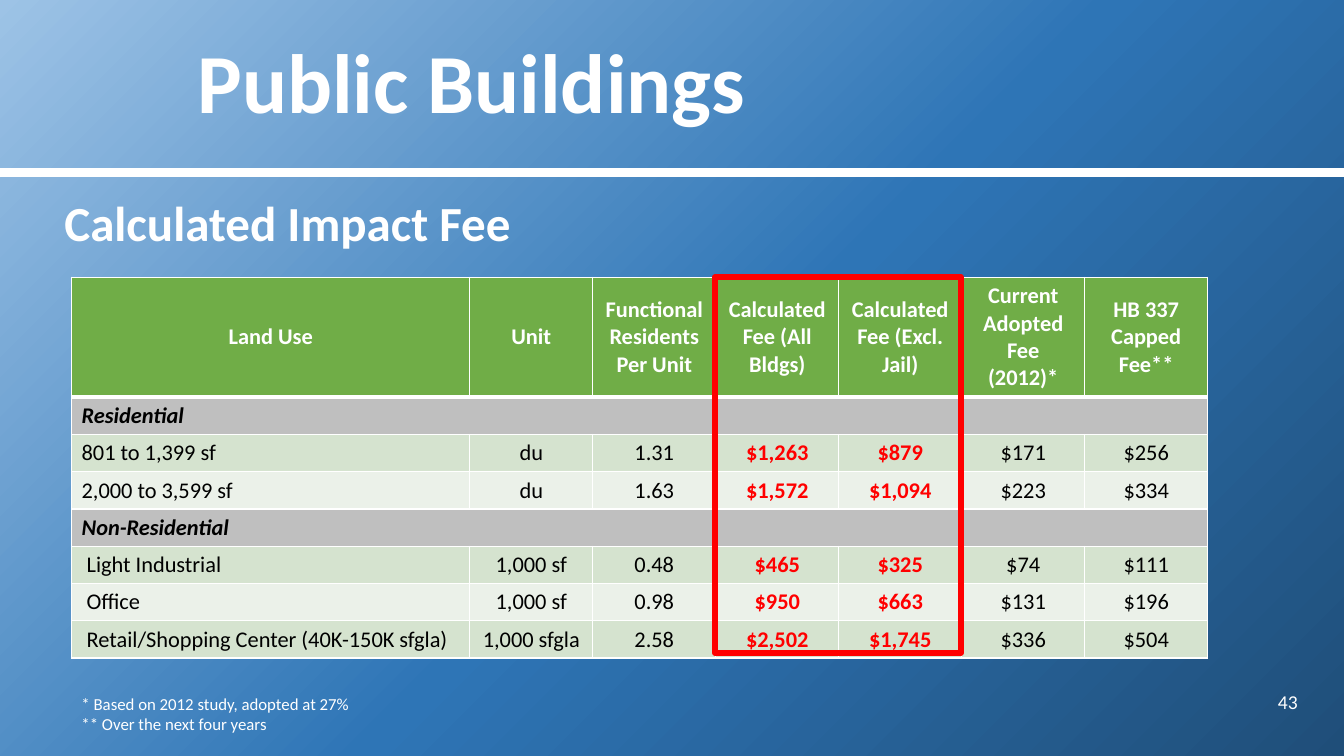
from pptx import Presentation
from pptx.dml.color import RGBColor
from pptx.enum.shapes import MSO_CONNECTOR, MSO_SHAPE
from pptx.enum.text import MSO_ANCHOR, MSO_AUTO_SIZE, PP_ALIGN
from pptx.oxml import parse_xml
from pptx.oxml.ns import nsdecls, qn
from pptx.util import Inches, Pt

STRAIGHT = MSO_CONNECTOR.STRAIGHT
RECTANGLE = MSO_SHAPE.RECTANGLE
TOP, MIDDLE = MSO_ANCHOR.TOP, MSO_ANCHOR.MIDDLE
LEFT, CENTER, RIGHT = PP_ALIGN.LEFT, PP_ALIGN.CENTER, PP_ALIGN.RIGHT
NO_AUTOFIT = MSO_AUTO_SIZE.NONE

WHITE = RGBColor(0xFF, 0xFF, 0xFF)
BLACK = RGBColor(0x00, 0x00, 0x00)
RED = RGBColor(0xFF, 0x00, 0x00)
GREEN = RGBColor(0x70, 0xAD, 0x47)
GRAY = RGBColor(0xBF, 0xBF, 0xBF)
DARK_BAND = RGBColor(0xD5, 0xE3, 0xCF)
LIGHT_BAND = RGBColor(0xEB, 0xF1, 0xE9)
LIGHT_BLUE = RGBColor(0x9D, 0xC3, 0xE6)
MID_BLUE = RGBColor(0x2E, 0x75, 0xB6)
DARK_BLUE = RGBColor(0x1F, 0x4E, 0x79)
BACKGROUND_STOPS = [(0, LIGHT_BLUE), (53, MID_BLUE), (100, DARK_BLUE)]

FONT = "Calibri"
TITLE_FORMAT = {"size": Pt(60), "bold": True}
HEADING_FORMAT = {"size": Pt(35), "bold": True}
NUMBER_FORMAT = {"size": Pt(14)}
NOTE_FORMAT = {"size": Pt(12)}
HEADER_FORMAT = {"size": Pt(16), "bold": True}
SECTION_FORMAT = {"size": Pt(16), "bold": True, "italic": True}
VALUE_FORMAT = {"size": Pt(16), "bold": False}
CALCULATED_FORMAT = {"size": Pt(16), "bold": True}

TABLE_LEFT, TABLE_TOP = 0.71, 2.75
COLUMN_WIDTHS = [3.95] + [1.22] * 6
HEADER_HEIGHT, ROW_HEIGHT = 1.19, 0.37
CALCULATED_COLUMNS = (3, 4)
HEADERS = ["Land Use", "Unit", "Functional Residents Per Unit",
           "Calculated Fee (All Bldgs)", "Calculated Fee (Excl. Jail)",
           "Current Adopted Fee (2012)*", "HB 337 Capped Fee**"]
FEE_SECTIONS = [
    ("Residential", [
        ["801 to 1,399 sf", "du", "1.31", "$1,263", "$879", "$171", "$256"],
        ["2,000 to 3,599 sf", "du", "1.63", "$1,572", "$1,094", "$223", "$334"],
    ]),
    ("Non-Residential", [
        [" Light Industrial", "1,000 sf", "0.48", "$465", "$325", "$74", "$111"],
        [" Office", "1,000 sf", "0.98", "$950", "$663", "$131", "$196"],
        [" Retail/Shopping Center (40K-150K sfgla)", "1,000 sfgla", "2.58",
         "$2,502", "$1,745", "$336", "$504"],
    ]),
]


def write_text(text_frame, lines, text_format, color=WHITE, align=LEFT, spacing=1.0):
    for index, line in enumerate(lines):
        paragraph = text_frame.paragraphs[0] if index == 0 else text_frame.add_paragraph()
        paragraph.alignment = align
        paragraph.line_spacing = spacing
        run = paragraph.add_run()
        run.text = line
        run.font.name = FONT
        run.font.color.rgb = color
        for name, value in text_format.items():
            setattr(run.font, name, value)


def set_background(slide):
    slide.background.fill.gradient()
    gradient = slide.element.find(".//" + qn("a:gradFill"))
    stops = "".join(
        f'<a:gs pos="{position * 1000}"><a:srgbClr val="{color}"/></a:gs>'
        for position, color in BACKGROUND_STOPS)
    gradient.getparent().replace(gradient, parse_xml(
        f'<a:gradFill {nsdecls("a")} rotWithShape="1"><a:gsLst>{stops}</a:gsLst>'
        '<a:path path="circle"><a:fillToRect r="100000" b="100000"/></a:path>'
        '</a:gradFill>'))


def add_divider(slide):
    divider = slide.shapes.add_connector(
        STRAIGHT, Inches(-0.02), Inches(1.71), Inches(13.33), Inches(1.71))
    divider.line.color.rgb = WHITE
    divider.line.width = Pt(6)
    divider.element.spPr.append(parse_xml(f'<a:effectLst {nsdecls("a")}/>'))


def format_title(slide, text):
    title = slide.shapes.title
    title.left, title.top = Inches(1.86), Inches(0)
    title.width, title.height = Inches(11.1), Inches(1.71)
    title.text_frame.auto_size = NO_AUTOFIT
    title.text_frame.vertical_anchor = MIDDLE
    write_text(title.text_frame, [text], TITLE_FORMAT, spacing=0.9)
    title.element.find(".//" + qn("a:rPr") + "/" + qn("a:solidFill")).addnext(parse_xml(
        f'<a:effectLst {nsdecls("a")}>'
        '<a:outerShdw blurRad="38100" dist="38100" dir="2700000" algn="tl">'
        '<a:srgbClr val="000000"><a:alpha val="43000"/></a:srgbClr>'
        '</a:outerShdw></a:effectLst>'))


def add_text(slide, box, lines, text_format, anchor=TOP, **layout):
    shape = slide.shapes.add_textbox(*(Inches(value) for value in box))
    shape.text_frame.word_wrap = True
    shape.text_frame.vertical_anchor = anchor
    write_text(shape.text_frame, lines, text_format, **layout)


def set_borders(cell, bottom_width):
    properties = cell._tc.get_or_add_tcPr()
    widths = {"lnL": 1, "lnR": 1, "lnT": 1, "lnB": bottom_width}
    for index, (side, width) in enumerate(widths.items()):
        properties.insert(index, parse_xml(
            f'<a:{side} {nsdecls("a")} w="{Pt(width)}"><a:solidFill>'
            f'<a:srgbClr val="{WHITE}"/></a:solidFill></a:{side}>'))


def fill_cell(cell, text, fill, text_format, color, align, bottom_width=1):
    cell.fill.solid()
    cell.fill.fore_color.rgb = fill
    cell.vertical_anchor = MIDDLE
    set_borders(cell, bottom_width)
    write_text(cell.text_frame, [text], text_format, color, align)


def fill_section_row(table, row, name):
    table.cell(row, 0).merge(table.cell(row, len(HEADERS) - 1))
    fill_cell(table.cell(row, 0), name, GRAY, SECTION_FORMAT, BLACK, LEFT)


def fill_fee_row(table, row, values, fill):
    for column, value in enumerate(values):
        calculated = column in CALCULATED_COLUMNS
        fill_cell(table.cell(row, column), value, fill,
                  CALCULATED_FORMAT if calculated else VALUE_FORMAT,
                  RED if calculated else BLACK,
                  CENTER if column else LEFT)


def add_fee_table(slide):
    row_count = 1 + sum(1 + len(rows) for _, rows in FEE_SECTIONS)
    height = HEADER_HEIGHT + ROW_HEIGHT * (row_count - 1)
    table = slide.shapes.add_table(
        row_count, len(HEADERS), Inches(TABLE_LEFT), Inches(TABLE_TOP),
        Inches(sum(COLUMN_WIDTHS)), Inches(height)).table
    for column, width in zip(table.columns, COLUMN_WIDTHS):
        column.width = Inches(width)
    for index, row in enumerate(table.rows):
        row.height = Inches(ROW_HEIGHT if index else HEADER_HEIGHT)
    for column, header in enumerate(HEADERS):
        fill_cell(table.cell(0, column), header, GREEN, HEADER_FORMAT, WHITE, CENTER, 3)
    row = 1
    for name, fee_rows in FEE_SECTIONS:
        fill_section_row(table, row, name)
        for index, values in enumerate(fee_rows):
            fill_fee_row(table, row + 1 + index, values,
                         LIGHT_BAND if index % 2 else DARK_BAND)
        row += 1 + len(fee_rows)


def add_highlight(slide):
    highlight = slide.shapes.add_shape(
        RECTANGLE, Inches(7.09), Inches(TABLE_TOP), Inches(2.44), Inches(3.73))
    highlight.shadow.inherit = False
    highlight.fill.background()
    highlight.line.color.rgb = RED
    highlight.line.width = Pt(4)


def main():
    presentation = Presentation()
    presentation.slide_width = Inches(13.33)
    presentation.slide_height = Inches(7.5)
    slide = presentation.slides.add_slide(presentation.slide_layouts[5])
    set_background(slide)
    add_divider(slide)
    format_title(slide, "Public Buildings")
    add_text(slide, (12.08, 6.76, 0.89, 0.4), ["43"], NUMBER_FORMAT, MIDDLE, align=RIGHT)
    add_text(slide, (0.54, 1.74, 12.42, 0.9), ["Calculated Impact Fee"],
             HEADING_FORMAT, spacing=1.2)
    add_fee_table(slide)
    add_highlight(slide)
    add_text(slide, (0.71, 6.83, 10.98, 0.5),
             ["* Based on 2012 study, adopted at 27%", "** Over the next four years"],
             NOTE_FORMAT)
    presentation.save("out.pptx")


if __name__ == "__main__":
    main()
